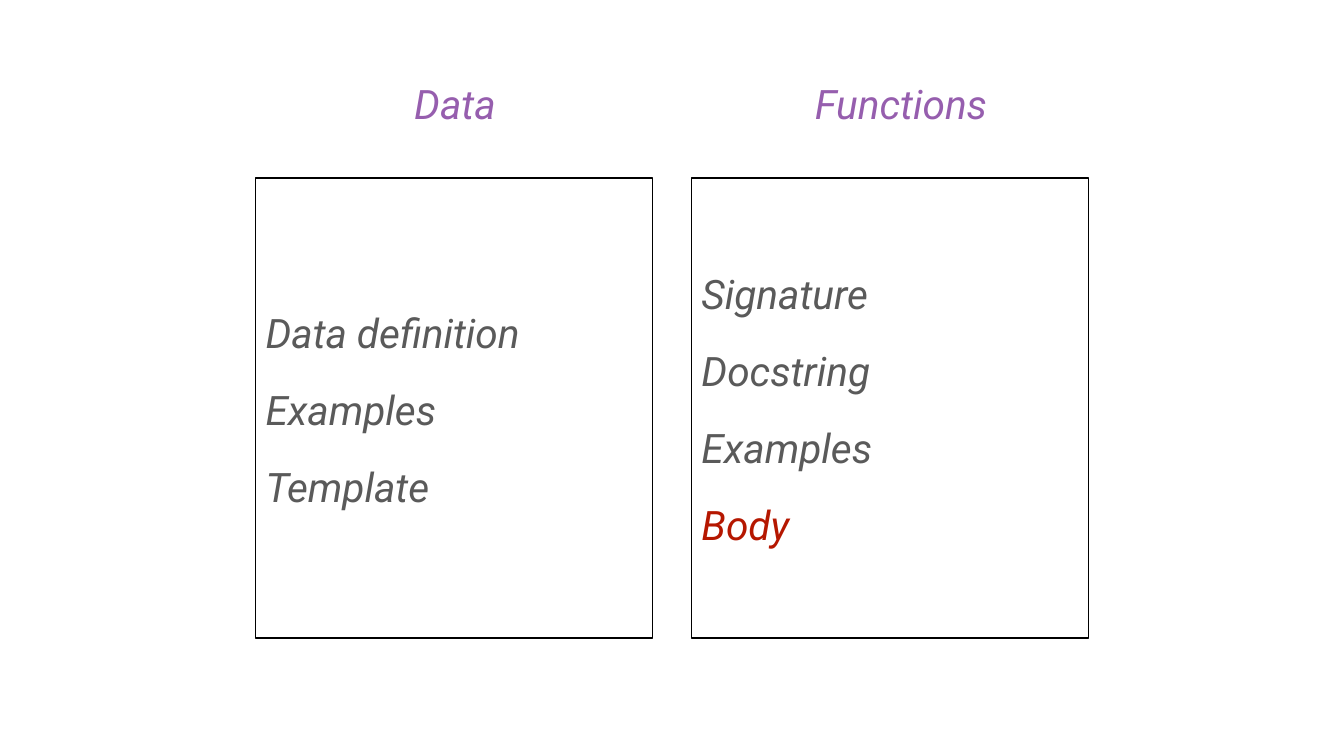
from pptx import Presentation
from pptx.dml.color import RGBColor
from pptx.enum.text import MSO_ANCHOR as Anchor, MSO_AUTO_SIZE as AutoSize, PP_ALIGN as Align
from pptx.oxml.ns import qn
from pptx.util import Inches, Pt
from lxml import etree

WHITE = RGBColor(0xFF, 0xFF, 0xFF)
BLACK = RGBColor(0x00, 0x00, 0x00)
GRAY = RGBColor(0x5A, 0x5A, 0x5A)
PURPLE = RGBColor(0x96, 0x5E, 0xAE)
RED = RGBColor(0xB5, 0x17, 0x00)

# Content: heading, heading left and width, recipe steps
COLUMNS = [
    ("Data", 8.12, 1.92, ["Data definition", "Examples", "Template"]),
    ("Functions", 16.07, 3.71, ["Signature", "Docstring", "Examples", "Body"]),
]
HIGHLIGHTED = {"Body"}

# Layout in inches
HEADING_TOP, HEADING_HEIGHT = 1.42, 1.2
BOX_LEFT, BOX_TOP, BOX_WIDTH, BOX_HEIGHT = 5.07, 3.53, 7.88, 9.13
COLUMN_STEP = 8.65

FONT_FORMAT = {"name": "Roboto", "size": Pt(58), "italic": True, "bold": False}
PARAGRAPH_FORMAT = {"alignment": Align.LEFT, "line_spacing": Pt(73),
                    "space_before": Pt(37), "space_after": Pt(0)}


def set_attributes(target, values):
    for name, value in values.items():
        setattr(target, name, value)


def place(shape, left, top, width, height):
    set_attributes(shape, {"left": Inches(left), "top": Inches(top),
                           "width": Inches(width), "height": Inches(height)})


def write_lines(shape, lines, color, inset, frame_format):
    frame = shape.text_frame
    set_attributes(frame, frame_format)
    margins = ("margin_left", "margin_top", "margin_right", "margin_bottom")
    set_attributes(frame, dict.fromkeys(margins, Inches(inset)))
    frame.text = "\n".join(lines)
    for paragraph in frame.paragraphs:
        set_attributes(paragraph, PARAGRAPH_FORMAT)
        # No bullet and no hanging indent
        properties = paragraph._p.get_or_add_pPr()
        properties.set("marL", "0")
        properties.set("indent", "0")
        etree.SubElement(properties, qn("a:buNone"))
        for run in paragraph.runs:
            set_attributes(run.font, FONT_FORMAT)
            run.font.color.rgb = RED if run.text in HIGHLIGHTED else color


presentation = Presentation()
presentation.slide_width = Inches(26.67)
presentation.slide_height = Inches(15)

# Comparison layout: a heading and a list for each column
slide = presentation.slides.add_slide(presentation.slide_layouts.get_by_name("Comparison"))
title, *parts = slide.placeholders
title.element.getparent().remove(title.element)

for index, (name, left, width, steps) in enumerate(COLUMNS):
    heading, box = parts[2 * index:2 * index + 2]

    # Heading
    place(heading, left, HEADING_TOP, width, HEADING_HEIGHT)
    write_lines(heading, [name], PURPLE, 0.1, {
        "word_wrap": False, "auto_size": AutoSize.SHAPE_TO_FIT_TEXT,
        "vertical_anchor": Anchor.TOP})

    # Framed list
    place(box, BOX_LEFT + index * COLUMN_STEP, BOX_TOP, BOX_WIDTH, BOX_HEIGHT)
    box.fill.solid()
    box.fill.fore_color.rgb = WHITE
    box.line.color.rgb = BLACK
    box.line.width = Pt(2)
    write_lines(box, steps, GRAY, 0.2, {
        "word_wrap": True, "auto_size": AutoSize.NONE,
        "vertical_anchor": Anchor.MIDDLE})

presentation.save("out.pptx")
